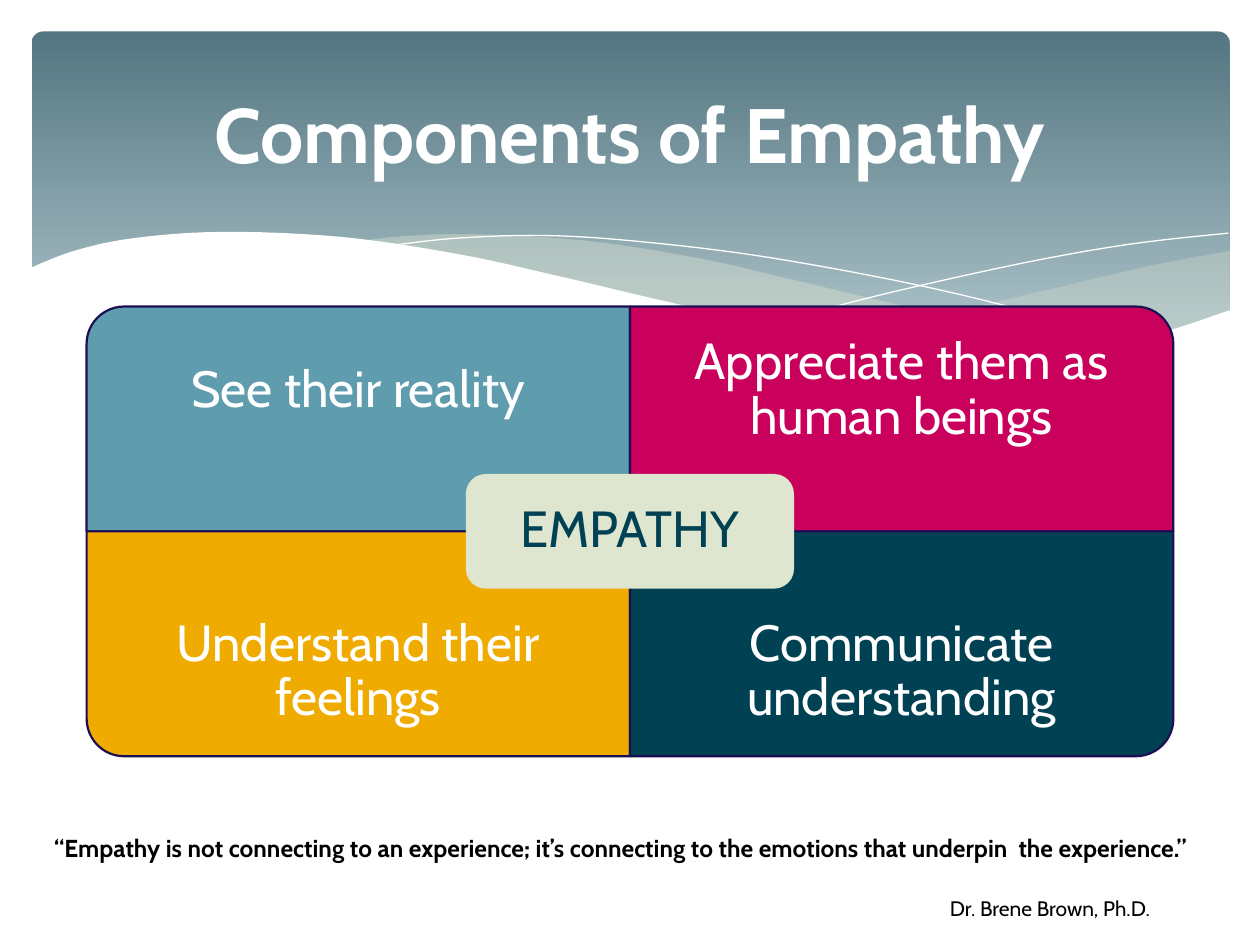
"""Build the slide on the components of empathy."""
from dataclasses import dataclass
from typing import NamedTuple

from lxml import etree
from pptx import Presentation
from pptx import util as u
from pptx.dml.color import RGBColor
from pptx.enum import shapes, text
from pptx.oxml import ns


@dataclass(frozen=True)
class Theme:
    font: str = "Cabin"
    white: str = "FFFFFF"
    black: str = "000000"
    sky_top: str = "537680"
    sky_bottom: str = "ACC2C9"
    pale: str = "DFE6D0"
    outline: str = "1C0E52"
    blue: str = "5E9CAE"
    pink: str = "CA005D"
    amber: str = "F0AB00"
    teal: str = "004153"
    title_size: float = 44
    label_size: float = 29
    quote_size: float = 14
    credit_size: float = 12
    border: float = 1.25


class Box(NamedTuple):
    left: float
    top: float
    width: float
    height: float


class Component(NamedTuple):
    label: str
    color: str
    column: int
    row: int
    rotation: int


class Wave(NamedTuple):
    curves: list
    corners: list
    fill: str | None = None
    opacity: int = 100


THEME = Theme()
GRID = Box(49.5, 175.15, 310.5, 128.5)
LABEL_HEIGHT = 96.4

COMPONENTS = [
    Component("See their reality", THEME.blue, 0, 0, 270),
    Component("Appreciate them as human beings", THEME.pink, 1, 0, 0),
    Component("Understand their feelings", THEME.amber, 0, 1, 180),
    Component("Communicate understanding", THEME.teal, 1, 1, 90),
]

WAVES = [
    Wave([[(702.7, 143.3), (652, 153), (599, 165.6), (542.2, 178.6), (475.9, 190.8)],
          [(475.9, 190.8), (527, 197.3), (579.6, 200.2), (627.8, 197.3),
           (668.2, 189.4), (702.7, 177.5)]], [], THEME.pale, 29),
    Wave([[(206, 137.5), (260.6, 146.2), (323.3, 159.8), (407.5, 178.6),
           (478.8, 191.5), (538.6, 198.7), (589, 200.2), (643, 196.6)],
          [(643, 196.6), (602.6, 190.8), (533.5, 178.6), (452.9, 159.8),
           (399.6, 147.6), (334.8, 137.5), (273.6, 133.9), (236.2, 134.6),
           (206, 137.5)]], [], THEME.pale, 40),
    Wave([[(222.5, 140.4), (261.4, 136.1), (311.8, 134.6), (367.2, 138.2),
           (437.8, 146.9), (523.4, 162.7), (598.3, 180.7), (653, 195.8)]], []),
    Wave([[(441.4, 185), (500.4, 169.2), (580.3, 151.2), (644.4, 139.7),
           (702, 133.2)]], []),
    Wave([[(703.4, 177.1), (655.2, 192.2), (602.6, 198.7), (547.9, 198),
           (481, 190.8), (399.6, 176.4), (321.8, 158.4), (262.8, 145.4),
           (195.1, 135.4), (127.4, 132.5), (76.3, 136.1), (42.5, 143.3),
           (16.6, 153.4)]], [(16.6, 236.9), (703.4, 236.9)], THEME.white),
]


def rgb(color: str) -> RGBColor:
    return RGBColor.from_string(color)


def smooth(knots: list, steps: int = 6) -> list:
    """Return points on a Catmull-Rom curve through the knots."""
    padded = [knots[0], *knots, knots[-1]]
    points = [knots[0]]
    for a, b, c, d in zip(padded, padded[1:], padded[2:], padded[3:]):
        for step in range(1, steps + 1):
            t = step / steps
            points.append(tuple(
                0.5 * (2 * q + (r - p) * t + (2 * p - 5 * q + 4 * r - s) * t**2
                       + (3 * q - p - 3 * r + s) * t**3)
                for p, q, r, s in zip(a, b, c, d)))
    return points


def draw_wave(slide, wave: Wave) -> None:
    outline = [point for curve in wave.curves for point in smooth(curve)]
    vertices = [(u.Pt(x), u.Pt(y)) for x, y in outline + wave.corners]
    builder = slide.shapes.build_freeform(*vertices[0])
    builder.add_line_segments(vertices[1:], close=wave.fill is not None)
    ribbon = builder.convert_to_shape()
    ribbon.shadow.inherit = False
    if wave.fill is None:
        ribbon.fill.background()
        ribbon.line.color.rgb = rgb(THEME.white)
        ribbon.line.width = u.Pt(0)
        return
    ribbon.fill.solid()
    ribbon.fill.fore_color.rgb = rgb(wave.fill)
    ribbon.line.fill.background()
    if wave.opacity < 100:
        tint = ribbon.element.spPr.find(".//" + ns.qn("a:srgbClr"))
        etree.SubElement(tint, ns.qn("a:alpha")).set("val", str(wave.opacity * 1000))


def draw_panel(slide, kind, box: Box, fill: str | None = None,
               line: str | None = None, rotation: int = 0):
    panel = slide.shapes.add_shape(kind, *map(u.Pt, box))
    panel.shadow.inherit = False
    panel.rotation = rotation
    if fill:
        panel.fill.solid()
        panel.fill.fore_color.rgb = rgb(fill)
    if line:
        panel.line.color.rgb = rgb(line)
        panel.line.width = u.Pt(THEME.border)
    else:
        panel.line.fill.background()
    return panel


def draw_text(slide, words: str, box: Box, *, size: float, color: str,
              bold: bool = False, align=text.PP_ALIGN.CENTER,
              anchor=text.MSO_ANCHOR.MIDDLE, inset: tuple = (7.2, 3.6),
              spacing: float = 1.0) -> None:
    frame = slide.shapes.add_textbox(*map(u.Pt, box)).text_frame
    frame.word_wrap = True
    frame.vertical_anchor = anchor
    frame.margin_left = frame.margin_right = u.Pt(inset[0])
    frame.margin_top = frame.margin_bottom = u.Pt(inset[1])
    paragraph = frame.paragraphs[0]
    paragraph.alignment = align
    paragraph.line_spacing = spacing
    run = paragraph.add_run()
    run.text = words
    run.font.name, run.font.size, run.font.bold = THEME.font, u.Pt(size), bold
    run.font.color.rgb = rgb(color)


def draw_banner(slide) -> None:
    sky = draw_panel(slide, shapes.MSO_SHAPE.ROUNDED_RECTANGLE, Box(18, 18, 684.7, 194.4))
    sky.adjustments[0] = 0.034
    sky.fill.gradient()
    sky.fill.gradient_angle = 270
    stops = ((0, THEME.sky_top), (0.9, THEME.sky_bottom))
    for stop, (position, color) in zip(sky.fill.gradient_stops, stops):
        stop.position = position
        stop.color.rgb = rgb(color)
    for wave in WAVES:
        draw_wave(slide, wave)


def draw_component(slide, part: Component) -> None:
    left = GRID.left + part.column * GRID.width
    top = GRID.top + part.row * GRID.height
    width, height = GRID.width, GRID.height
    if part.rotation % 180:
        width, height = height, width
    quadrant = Box(left + (GRID.width - width) / 2, top + (GRID.height - height) / 2,
                   width, height)
    draw_panel(slide, shapes.MSO_SHAPE.ROUND_1_RECTANGLE, quadrant, part.color,
               THEME.outline, part.rotation)
    label_top = top + part.row * (GRID.height - LABEL_HEIGHT)
    draw_text(slide, part.label, Box(left, label_top, GRID.width, LABEL_HEIGHT),
              size=THEME.label_size, color=THEME.white, inset=(16.5, 16.5), spacing=0.9)


def main() -> None:
    deck = Presentation()
    deck.slide_width, deck.slide_height = u.Pt(720), u.Pt(540)
    slide = deck.slides.add_slide(deck.slide_layouts[6])
    draw_banner(slide)
    draw_text(slide, "Components of Empathy", Box(36, 26.6, 648, 98.6),
              size=THEME.title_size, color=THEME.white, bold=True)
    for part in COMPONENTS:
        draw_component(slide, part)
    draw_panel(slide, shapes.MSO_SHAPE.ROUNDED_RECTANGLE, Box(266.85, 271.5, 186.3, 64.3),
               THEME.pale, THEME.pale)
    draw_text(slide, "EMPATHY", Box(270, 274.7, 180, 58), size=THEME.label_size,
              color=THEME.teal, inset=(8.6, 8.6), spacing=0.9)
    draw_text(slide, "“Empathy is not connecting to an experience; it’s connecting to "
              "the emotions that underpin  the experience.”", Box(23.8, 472.3, 672, 25),
              size=THEME.quote_size, color=THEME.black, bold=True,
              align=text.PP_ALIGN.LEFT, anchor=text.MSO_ANCHOR.TOP)
    draw_text(slide, "Dr. Brene Brown, Ph.D.", Box(500, 508, 164.4, 22),
              size=THEME.credit_size, color=THEME.black, align=text.PP_ALIGN.RIGHT,
              anchor=text.MSO_ANCHOR.TOP)
    deck.save("out.pptx")


if __name__ == "__main__":
    main()
